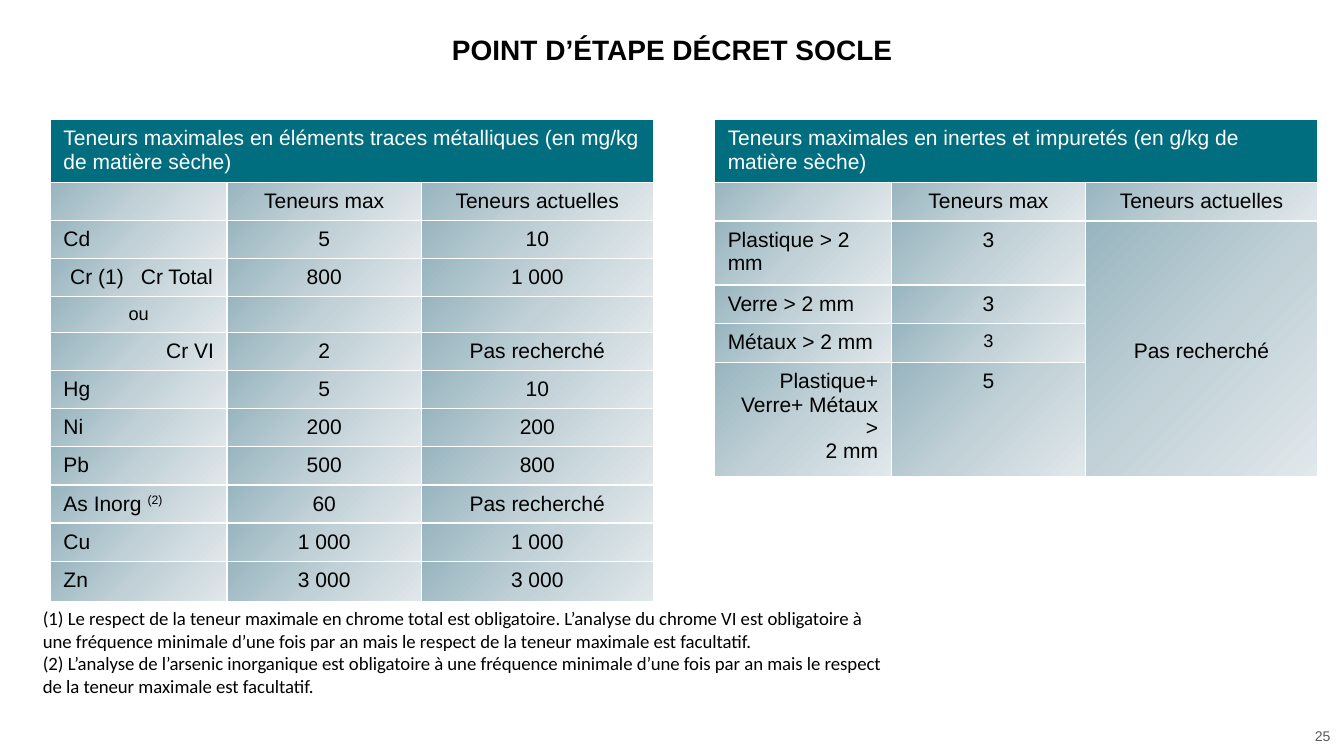
from lxml import etree
from pptx import Presentation
from pptx.dml.color import RGBColor
from pptx.enum import text
from pptx.oxml import ns
from pptx.util import Cm, Pt

LEFT, CENTER, RIGHT = text.PP_ALIGN.LEFT, text.PP_ALIGN.CENTER, text.PP_ALIGN.RIGHT
MIDDLE = text.MSO_ANCHOR.MIDDLE
COLUMN_WIDTHS = (4.45, 4.9, 5.84)
HEADINGS = ("", "Teneurs max", "Teneurs actuelles")
GRADIENT = ((0, "98B5BF"), (50, "C1D1D7"), (100, "E1E8EB"))
METALS = (
    ("Cd", "5", "10"),
    ("", "800", "1 000"),
    ("", "", ""),
    ("", "2", "Pas recherché"),
    ("Hg", "5", "10"),
    ("Ni", "200", "200"),
    ("Pb", "500", "800"),
    ("As Inorg ", "60", "Pas recherché"),
    ("Cu", "1 000", "1 000"),
    ("Zn", "3 000", "3 000"),
)
IMPURITIES = (
    ("Plastique > 2 mm", "3", "Pas recherché"),
    ("Verre > 2 mm", "3", ""),
    ("Métaux > 2 mm", "", ""),
    ("", "5", ""),
)
NOTES = (
    "(1) Le respect de la teneur maximale en chrome total est obligatoire. L’analyse du chrome VI est obligatoire à",
    "une fréquence minimale d’une fois par an mais le respect de la teneur maximale est facultatif.",
    "(2) L’analyse de l’arsenic inorganique est obligatoire à une fréquence minimale d’une fois par an mais le respect",
    "de la teneur maximale est facultatif.",
)


def rgb(value):
    """Turn a hex string into a colour."""
    return RGBColor.from_string(value)


def sub(parent, tag, **attrs):
    """Append a DrawingML child element."""
    return etree.SubElement(parent, ns.qn(f"a:{tag}"), attrs)


def add_run(p, content, size, color="000000", font="Arial", bold=False):
    """Add one formatted run to a paragraph."""
    r = p.add_run()
    r.text = content
    r.font.name, r.font.size, r.font.bold = font, Pt(size), bold
    r.font.color.rgb = rgb(color)
    return r


def write(tf, lines, align, size, **style):
    """Write one paragraph per line into a text frame."""
    for i, line in enumerate(lines):
        p = tf.add_paragraph() if i else tf.paragraphs[0]
        p.alignment = align
        if line:
            add_run(p, line, size, **style)
        else:
            p._p.get_or_add_endParaRPr().set("sz", str(size * 100))


def add_text(s, box, lines, align, size, margin, anchor=text.MSO_ANCHOR.TOP, **style):
    """Add a wrapped text box."""
    tf = s.shapes.add_textbox(*map(Cm, box)).text_frame
    tf.word_wrap = True
    tf.vertical_anchor = anchor
    tf.margin_left = tf.margin_right = tf.margin_top = tf.margin_bottom = Cm(margin)
    write(tf, lines, align, size, **style)
    return tf


def style_cell(cell, header):
    """Set the margins, white borders and fill of a cell."""
    cell.margin_left = cell.margin_right = Cm(0.33)
    cell.margin_top, cell.margin_bottom = Cm(0.18), Cm(0.08)
    tcPr = cell._tc.get_or_add_tcPr()
    for side in "LRTB":
        ln = sub(tcPr, f"ln{side}", w=str(Pt(1)))
        sub(sub(ln, "solidFill"), "srgbClr", val="FFFFFF")
    if header:
        cell.fill.solid()
        cell.fill.fore_color.rgb = rgb("006E7F")
        return
    grad = sub(tcPr, "gradFill", rotWithShape="1")
    stops = sub(grad, "gsLst")
    for position, color in GRADIENT:
        sub(sub(stops, "gs", pos=str(position * 1000)), "srgbClr", val=color)
    sub(grad, "lin", ang=str(45 * 60000), scaled="0")


def add_content_table(s, left, title, body, heights):
    """Add a table with a title row, a heading row and body rows."""
    rows = [(title, "", ""), HEADINGS, *body]
    frame = s.shapes.add_table(len(rows), 3, Cm(left), Cm(3.02),
                               Cm(sum(COLUMN_WIDTHS)), Cm(sum(heights)))
    table = frame.table
    table.first_row = table.horz_banding = False
    for column, width in zip(table.columns, COLUMN_WIDTHS):
        column.width = Cm(width)
    for i, (values, height) in enumerate(zip(rows, heights)):
        table.rows[i].height = Cm(height)
        for j, value in enumerate(values):
            cell = table.cell(i, j)
            style_cell(cell, header=i == 0)
            write(cell.text_frame, [value], CENTER if j else LEFT,
                  15 if any(values) else 13, color="000000" if i else "FFFFFF")
    table.cell(0, 0).merge(table.cell(0, 2))
    return table


def add_metals(s):
    """Add the table of trace metals with its chromium and arsenic labels."""
    table = add_content_table(
        s, 1.27, "Teneurs maximales en éléments traces métalliques (en mg/kg de matière sèche)",
        METALS, [1.57] + [0.96] * 3 + [0.91] + [0.96] * 6 + [1.03])
    total = table.cell(3, 0)
    total.margin_left = Cm(0.5)
    total.margin_right = Cm(0.2)
    p = total.text_frame.paragraphs[0]
    sub(sub(p._p.get_or_add_pPr(), "tabLst"), "tab", pos=str(Cm(1.78)), algn="l")
    write(total.text_frame, ["Cr (1)\tCr Total"], LEFT, 15)
    write(table.cell(4, 0).text_frame, ["ou"], CENTER, 13)
    write(table.cell(5, 0).text_frame, ["Cr VI"], RIGHT, 15)
    mark = add_run(table.cell(9, 0).text_frame.paragraphs[0], "(2)", 15)
    mark.font._element.set("baseline", "30000")


def add_impurities(s):
    """Add the table of inert matter and impurities."""
    table = add_content_table(
        s, 18.01, "Teneurs maximales en inertes et impuretés (en g/kg de matière sèche)",
        IMPURITIES, [1.57, 0.98, 1.61, 0.98, 0.98, 2.87])
    write(table.cell(4, 1).text_frame, ["3"], CENTER, 13)
    write(table.cell(5, 0).text_frame, ["Plastique+ Verre+ Métaux >", "2 mm"], RIGHT, 15)
    table.cell(2, 2).merge(table.cell(5, 2))
    table.cell(2, 2).vertical_anchor = MIDDLE


def main():
    """Build the slide and save it."""
    prs = Presentation()
    prs.slide_width, prs.slide_height = Cm(33.87), Cm(19.05)
    s = prs.slides.add_slide(prs.slide_layouts[6])
    title = add_text(s, (5.13, 0.15, 23.62, 2.31), ["POINT D’ÉTAPE DÉCRET SOCLE"],
                     CENTER, 20, 0.1, MIDDLE, bold=True)
    title.paragraphs[0].line_spacing = 0.9
    add_text(s, (29.85, 18.26, 3.78, 0.56), ["25"], RIGHT, 10, 0.1, MIDDLE, color="595959")
    add_metals(s)
    add_text(s, (0.95, 15.17, 22.35, 2.54), NOTES, LEFT, 13.33, 0.13, font="Calibri")
    add_impurities(s)
    prs.save("out.pptx")


if __name__ == "__main__":
    main()
